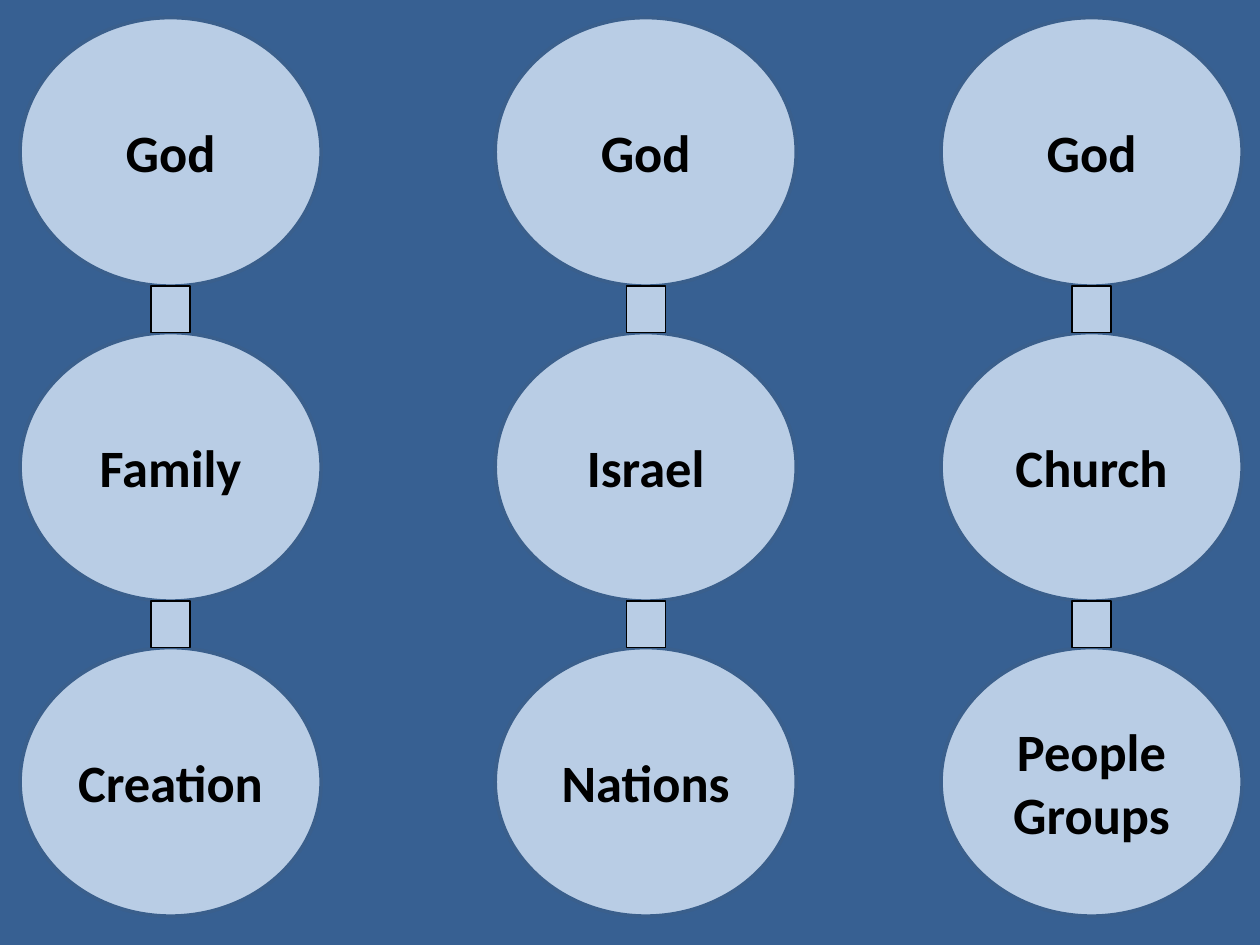
from pptx import Presentation
from pptx.dml.color import RGBColor
from pptx.enum.shapes import MSO_SHAPE
from pptx.enum.text import MSO_ANCHOR, PP_ALIGN
from pptx.util import Pt

NAVY = RGBColor(0x37, 0x60, 0x92)
EDGE = RGBColor(0x3A, 0x5F, 0x8C)
PALE = RGBColor(0xB9, 0xCD, 0xE5)
BLACK = RGBColor(0, 0, 0)

TOP, STEP = 10.1, 180
WIDE, HIGH = 172, 153.4
LINK = 22.3

CHAINS = [
    (11.5, ["God", "Family", "Creation"]),
    (537.8, ["God", "Church", "People\nGroups"]),
    (283, ["God", "Israel", "Nations"]),
]


class Deck:
    font = {"name": "Calibri", "size": Pt(30), "bold": True}

    def __init__(self):
        self.show = Presentation()
        self.show.slide_width, self.show.slide_height = Pt(720), Pt(540)
        self.slide = self.show.slides.add_slide(self.show.slide_layouts[6])
        back = self.slide.background.fill
        back.solid()
        back.fore_color.rgb = NAVY

    def shape(self, group, kind, box, edge, width):
        item = group.shapes.add_shape(kind, *map(Pt, box))
        item.shadow.inherit = False
        item.fill.solid()
        item.fill.fore_color.rgb = PALE
        item.line.color.rgb = edge
        item.line.width = Pt(width)
        return item

    def circle(self, group, x, y, text):
        item = self.shape(group, MSO_SHAPE.OVAL, (x, y, WIDE, HIGH), EDGE, 2)
        frame = item.text_frame
        frame.word_wrap = True
        frame.vertical_anchor = MSO_ANCHOR.MIDDLE
        frame.text = text
        for para in frame.paragraphs:
            para.alignment = PP_ALIGN.CENTER
            for run in para.runs:
                for key, value in self.font.items():
                    setattr(run.font, key, value)
                run.font.color.rgb = BLACK

    def link(self, group, x, y):
        """Fill the gap below the circle at x, y."""
        box = (x + (WIDE - LINK) / 2, y + HIGH, LINK, STEP - HIGH)
        self.shape(group, MSO_SHAPE.RECTANGLE, box, BLACK, 0.75)

    def chain(self, x, words):
        group = self.slide.shapes.add_group_shape()
        tops = [TOP + STEP * row for row in range(len(words))]
        for y, word in zip(tops, words):
            self.circle(group, x, y, word)
        for y in tops[:-1]:
            self.link(group, x, y)


def main():
    deck = Deck()
    for x, words in CHAINS:
        deck.chain(x, words)
    deck.show.save("out.pptx")


if __name__ == "__main__":
    main()
